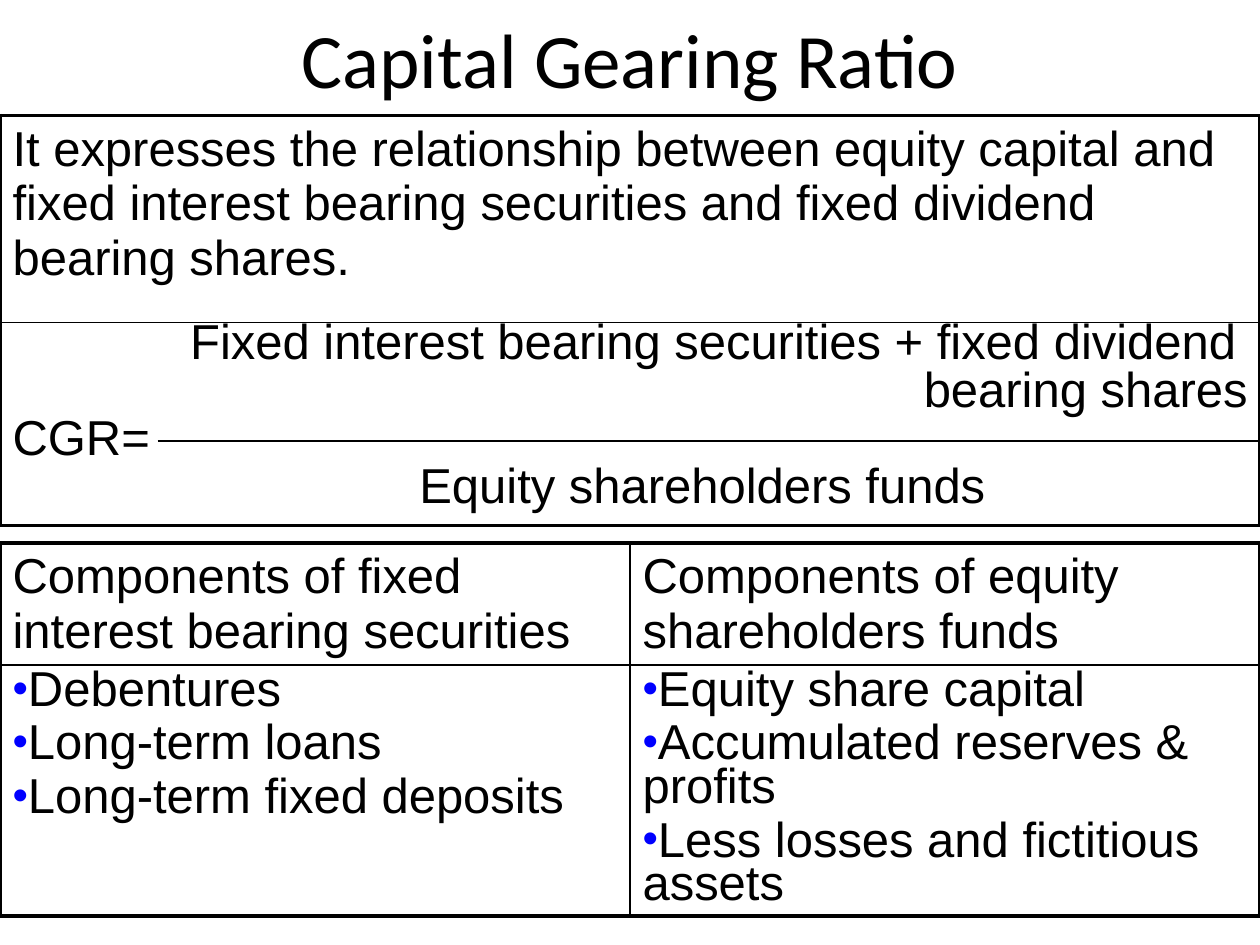
from typing import NamedTuple

from lxml.etree import SubElement
from pptx import Presentation
from pptx.dml.color import RGBColor
from pptx.enum.shapes import MSO_CONNECTOR
from pptx.enum.text import MSO_ANCHOR, PP_ALIGN
from pptx.oxml.ns import qn
from pptx.util import Cm, Pt

HUES = {"ink": "000000", "dot": "0000FF"}
WIDE = 25.4
EDGE, RULE = 2.25, 1


class Para(NamedTuple):
    text: str
    space: float = 1
    left: float = 0
    align: PP_ALIGN = PP_ALIGN.LEFT
    dot: bool = False


class Grid(NamedTuple):
    top: float
    rows: list[float]
    cells: list[list[list[Para]]]


def listed(*names: str) -> list[Para]:
    return [Para(name, 0.8, dot=True) for name in names]


GRIDS = [
    Grid(10.95, [1.8, 3.81], [
        [[Para("Components of fixed interest bearing securities")],
         [Para("Components of equity shareholders funds")]],
        [listed("Debentures", "Long-term loans", "Long-term fixed deposits"),
         listed("Equity share capital", "Accumulated reserves & profits",
                "Less losses and fictitious assets")],
    ]),
    Grid(2.33, [4.17, 4.09], [
        [[Para("It expresses the relationship between equity capital and "
               "fixed interest bearing securities and fixed dividend "
               "bearing shares.")]],
        [[Para("Fixed interest bearing securities + fixed dividend", 0.7, 3.58),
          Para("bearing shares", 0.7, align=PP_ALIGN.RIGHT),
          Para("CGR=", 0.7),
          Para("Equity shareholders funds", 0.7, 8.2)]],
    ]),
]


def style(para, font: str, size: float) -> None:
    for run in para.runs:
        run.font.name = font
        run.font.size = Pt(size)
        run.font.color.rgb = RGBColor.from_string(HUES["ink"])


def bullet(props) -> None:
    hue = SubElement(props, qn("a:buClr"))
    SubElement(hue, qn("a:srgbClr"), val=HUES["dot"])
    SubElement(props, qn("a:buSzPct"), val="90000")
    SubElement(props, qn("a:buFont"), typeface="Arial")
    SubElement(props, qn("a:buChar"), char="•")


def write(frame, paras: list[Para]) -> None:
    frame.text = "\n".join(item.text for item in paras)
    for para, item in zip(frame.paragraphs, paras):
        para.alignment = item.align
        para.line_spacing = item.space
        para.space_before = Pt(5.6)
        style(para, "Arial", 28)
        props = para._p.get_or_add_pPr()
        props.set("marL", str(Cm(item.left)))
        props.set("indent", "0")
        if item.dot:
            bullet(props)


def border(cell, sides: dict[str, float]) -> None:
    props = cell._tc.get_or_add_tcPr()
    for side, width in sides.items():
        line = SubElement(props, qn(f"a:ln{side}"), w=str(Pt(width)))
        fill = SubElement(line, qn("a:solidFill"))
        SubElement(fill, qn("a:srgbClr"), val=HUES["ink"])


def draw(slide, grid: Grid) -> None:
    """Add a table with a heavy frame and light inner rules."""
    high, wide = len(grid.rows), len(grid.cells[0])
    table = slide.shapes.add_table(
        high, wide, Cm(0), Cm(grid.top), Cm(WIDE), Cm(sum(grid.rows))).table
    table.first_row = table.horz_banding = False
    for row, size in zip(table.rows, grid.rows):
        row.height = Cm(size)
    for r, line in enumerate(grid.cells):
        for c, paras in enumerate(line):
            cell = table.cell(r, c)
            write(cell.text_frame, paras)
            outer = {"L": c == 0, "R": c == wide - 1,
                     "T": r == 0, "B": r == high - 1}
            border(cell, {side: EDGE if out else RULE
                          for side, out in outer.items()})
            cell.fill.background()


def head(slide, text: str) -> None:
    title = slide.shapes.title
    title.left, title.top = Cm(1.27), Cm(0)
    title.width, title.height = Cm(22.86), Cm(2.33)
    frame = title.text_frame
    frame.text = text
    frame.vertical_anchor = MSO_ANCHOR.MIDDLE
    frame.paragraphs[0].alignment = PP_ALIGN.CENTER
    style(frame.paragraphs[0], "Calibri", 44)


def divide(slide, left: float, top: float) -> None:
    """Draw the fraction bar out to the right edge."""
    bar = slide.shapes.add_connector(
        MSO_CONNECTOR.STRAIGHT, Cm(left), Cm(top), Cm(WIDE), Cm(top))
    bar.line.width = Pt(0.75)
    bar.line.color.rgb = RGBColor.from_string(HUES["ink"])
    SubElement(bar._element.spPr, qn("a:effectLst"))


def main() -> None:
    deck = Presentation()
    deck.slide_width, deck.slide_height = Cm(WIDE), Cm(19.05)
    slide = deck.slides.add_slide(deck.slide_layouts[5])
    head(slide, "Capital Gearing Ratio")
    for grid in GRIDS:
        draw(slide, grid)
    divide(slide, 3.18, 8.89)
    deck.save("out.pptx")


if __name__ == "__main__":
    main()
